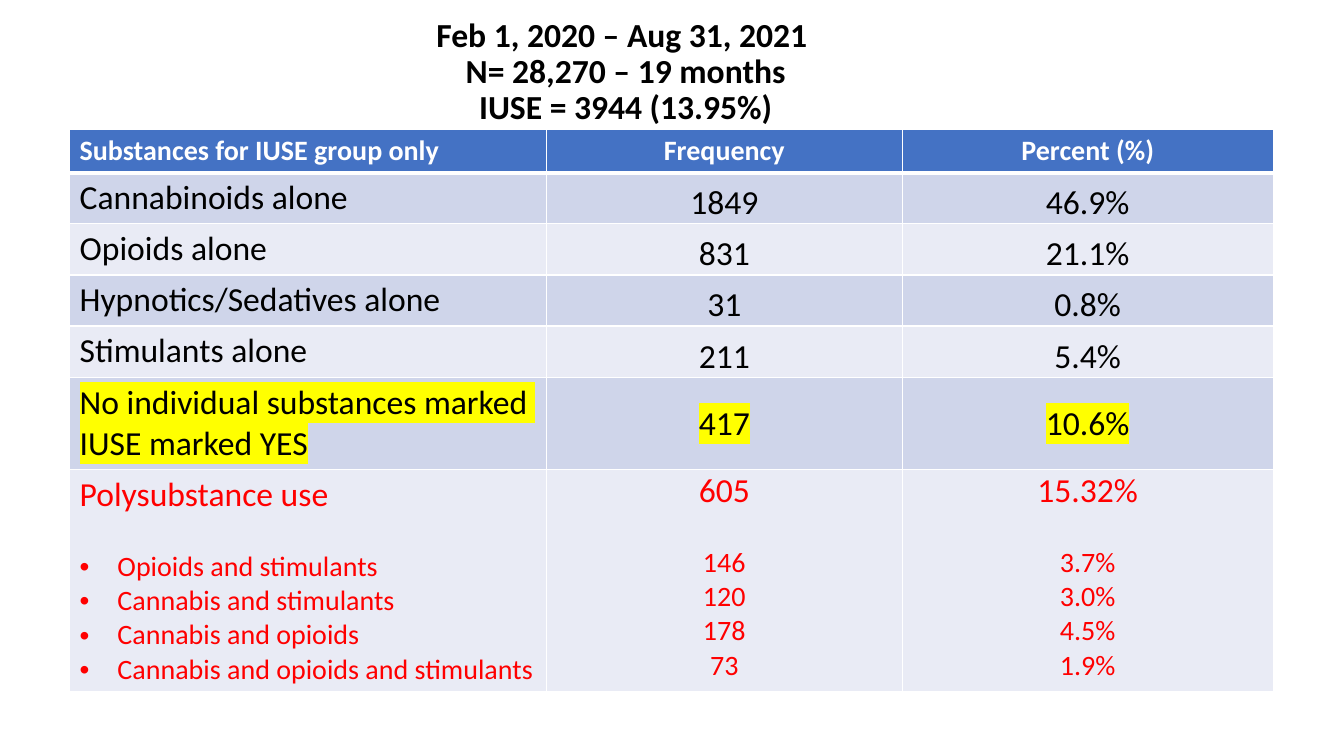
"""Build the slide on substances found in the IUSE group."""
import pptx
import pptx.dml.color
import pptx.enum.text
import pptx.oxml
import pptx.oxml.ns
import pptx.util

Pt = pptx.util.Pt
ALIGN = pptx.enum.text.PP_ALIGN
ANCHOR = pptx.enum.text.MSO_ANCHOR
NS = pptx.oxml.ns.nsdecls("a")


def paint(fill, color):
    fill.solid()
    fill.fore_color.rgb = pptx.dml.color.RGBColor.from_string(color)


def write(para, text, size, color, bold=False, mark=None):
    para.text = text
    for run in para.runs:
        paint(run.font.fill, color)
        if mark:
            glow = f'<a:highlight {NS}><a:srgbClr val="{mark}"/></a:highlight>'
            run.font._element.append(pptx.oxml.parse_xml(glow))
        for key, value in {"name": "Calibri", "size": Pt(size), "bold": bold}.items():
            setattr(run.font, key, value)


deck = pptx.Presentation()
deck.slide_width, deck.slide_height = Pt(960), Pt(540)
slide = deck.slides.add_slide(deck.slide_layouts[6])

title = slide.shapes.add_textbox(Pt(33), Pt(11.5), Pt(828), Pt(80.6)).text_frame
title.word_wrap = True
title.vertical_anchor = ANCHOR.MIDDLE
head = title.paragraphs[0]
head.alignment = ALIGN.CENTER
head.line_spacing = 0.9
write(head, "Feb 1, 2020 – Aug 31, 2021 \vN= 28,270 – 19 months\vIUSE = 3944 (13.95%)",
      24, "000000", True)

rows = [
    ("Substances for IUSE group only", "Frequency", "Percent (%)"),
    ("Cannabinoids alone", "1849", "46.9%"),
    ("Opioids alone", "831", "21.1%"),
    ("Hypnotics/Sedatives alone", "31", "0.8%"),
    ("Stimulants alone", "211", "5.4%"),
    ("No individual substances marked \nIUSE marked YES", "417", "10.6%"),
    ("Polysubstance use\nOpioids and stimulants\nCannabis and stimulants\n"
     "Cannabis and opioids\nCannabis and opioids and stimulants",
     "605\n146\n120\n178\n73", "15.32%\n3.7%\n3.0%\n4.5%\n1.9%"),
]
wide = [340.6, 254.2, 265]
high = [30.8, 36.5, 36.5, 36.5, 36.5, 66, 158.4]
top, marked, poly = 0, 5, 6

table = slide.shapes.add_table(len(rows), len(wide), Pt(49.7), Pt(92.2),
                               Pt(sum(wide)), Pt(sum(high))).table
for column, width in zip(table.columns, wide):
    column.width = Pt(width)

for r, row in enumerate(rows):
    table.rows[r].height = Pt(high[r])
    for c, text in enumerate(row):
        cell = table.cell(r, c)
        paint(cell.fill, "4472C4" if r == top else "CFD5EA" if r % 2 else "E9EBF5")
        form = {"vertical_anchor": ANCHOR.TOP if r == top else ANCHOR.BOTTOM}
        if c and r != top:
            form.update(margin_left=Pt(0.7), margin_right=Pt(0.7),
                        margin_top=Pt(0.7), margin_bottom=0)
            if r == marked:
                form["vertical_anchor"] = ANCHOR.MIDDLE
            elif r == poly:
                form["vertical_anchor"] = ANCHOR.TOP
        for key, value in form.items():
            setattr(cell, key, value)

        props = cell._tc.get_or_add_tcPr()
        for i, side in enumerate("LRTB"):
            thick = (r, side) in [(0, "B"), (1, "T")]
            line = (f'<a:ln{side} {NS} w="{Pt(3 if thick else 1)}"><a:solidFill>'
                    f'<a:srgbClr val="FFFFFF"/></a:solidFill></a:ln{side}>')
            props.insert(i, pptx.oxml.parse_xml(line))

        for n, part in enumerate(text.split("\n")):
            frame = cell.text_frame
            para = frame.add_paragraph() if n else frame.paragraphs[0]
            para.alignment = ALIGN.CENTER if c else ALIGN.LEFT
            detail = r == poly and n > 0
            if detail and n == 1:
                para.space_before = Pt(24.4)
            layout = para._p.get_or_add_pPr()
            if detail and c == 0:
                layout.set("marL", str(Pt(27)))
                layout.set("indent", str(Pt(-27)))
                for bit in ('buFont {} typeface="Arial"', 'buChar {} char="•"'):
                    layout.append(pptx.oxml.parse_xml(f"<a:{bit.format(NS)}/>"))
            elif part == "178":
                layout.set("marL", "0")
                layout.set("indent", str(Pt(-9)))
            color = "FFFFFF" if r == top else "FF0000" if r == poly else "000000"
            write(para, part, 20 if r == top or detail else 24, color,
                  r == top, "FFFF00" if r == marked else None)

deck.save("out.pptx")
